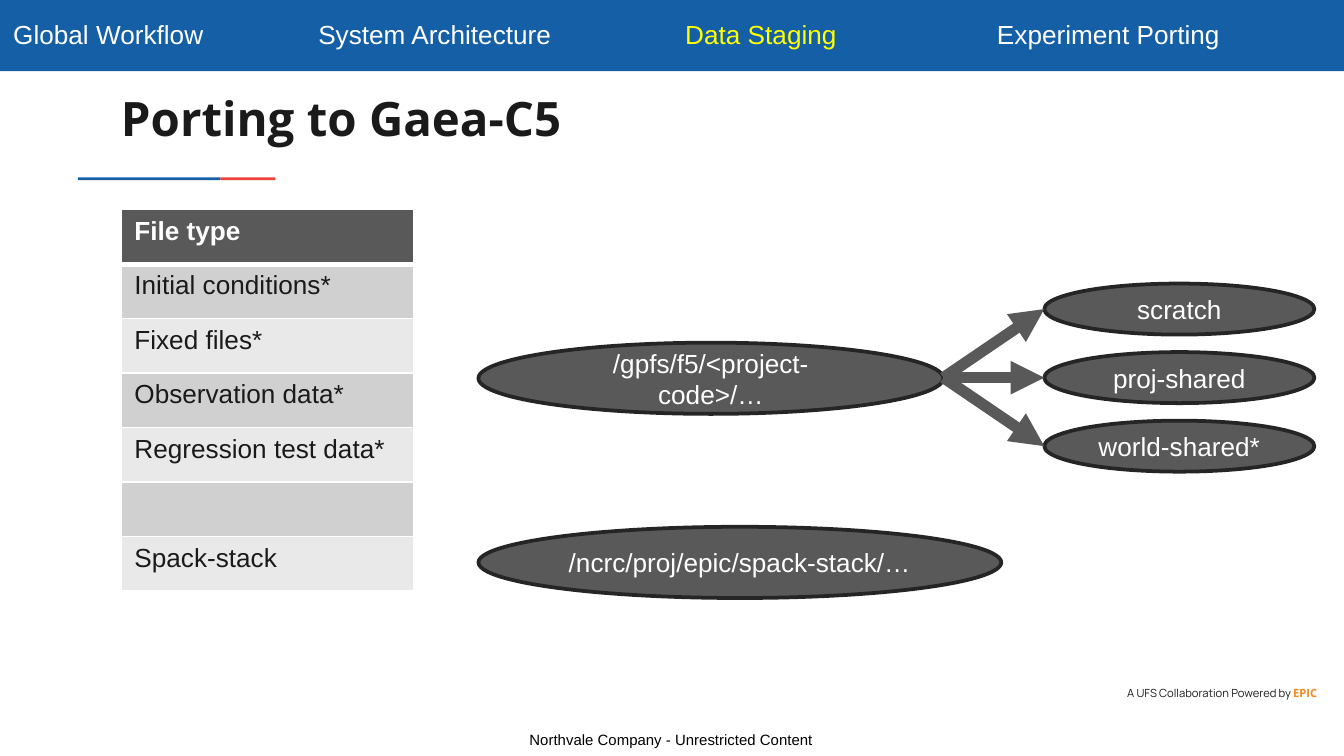
from lxml import etree
from pptx import Presentation
from pptx import util as u
from pptx.dml.color import RGBColor
from pptx.enum import shapes, text
from pptx.oxml.ns import qn

COLORS = {
    "blue": "145FA6", "red": "EE4238", "orange": "F68822", "yellow": "FFFF00",
    "gray": "595959", "outline": "252525", "ink": "1A1A1A",
    "band_dark": "D0D0D0", "band_light": "E9E9E9",
    "white": "FFFFFF", "black": "000000",
}
FILE_TYPES = ["File type", "Initial conditions*", "Fixed files*", "Observation data*",
              "Regression test data*", "", "Spack-stack"]
SECTIONS = ["Global Workflow", "System Architecture", "Data Staging", "Experiment Porting"]
CURRENT_SECTION = "Data Staging"
SECTION_TABS = [2.27, 5, 7.32]
PROJECT_FOLDERS = ["scratch", "proj-shared", "world-shared*"]


def rgb(name):
    return RGBColor.from_string(COLORS[name])


def add_run(para, words, size, color, font="Arial", bold=False):
    span = para.add_run()
    span.text = words
    span.font.size = u.Pt(size)
    span.font.name = font
    span.font.bold = bold
    span.font.color.rgb = rgb(color)


def add_text_box(page, left, top, width, height, align, inset=True):
    """Add an empty wrapping text box and return its first paragraph."""
    box = page.shapes.add_textbox(*map(u.Inches, (left, top, width, height)))
    frame = box.text_frame
    frame.word_wrap = True
    if not inset:
        frame.margin_left = frame.margin_right = 0
        frame.margin_top = frame.margin_bottom = 0
    para = frame.paragraphs[0]
    para.alignment = align
    return para


def add_bar(page, left, top, width, height, color):
    bar = page.shapes.add_shape(shapes.MSO_SHAPE.RECTANGLE,
                                *map(u.Inches, (left, top, width, height)))
    bar.shadow.inherit = False
    bar.fill.solid()
    bar.fill.fore_color.rgb = rgb(color)
    bar.line.fill.background()


def add_ellipse(page, words, left, top, width, height, side_margin=0.1):
    ellipse = page.shapes.add_shape(shapes.MSO_SHAPE.OVAL,
                                    *map(u.Inches, (left, top, width, height)))
    ellipse.shadow.inherit = False
    ellipse.fill.solid()
    ellipse.fill.fore_color.rgb = rgb("gray")
    ellipse.line.color.rgb = rgb("outline")
    ellipse.line.width = u.Pt(2)
    frame = ellipse.text_frame
    frame.word_wrap = True
    frame.margin_left = frame.margin_right = u.Inches(side_margin)
    frame.vertical_anchor = text.MSO_ANCHOR.MIDDLE
    frame.paragraphs[0].alignment = text.PP_ALIGN.CENTER
    add_run(frame.paragraphs[0], words, 14, "white")


def add_arrow(page, x1, y1, x2, y2):
    arrow = page.shapes.add_connector(shapes.MSO_CONNECTOR.STRAIGHT,
                                      *map(u.Inches, (x1, y1, x2, y2)))
    arrow.line.color.rgb = rgb("gray")
    arrow.line.width = u.Pt(6)
    etree.SubElement(arrow.line._get_or_add_ln(), qn("a:tailEnd"), type="triangle")
    etree.SubElement(arrow._element.spPr, qn("a:effectLst"))


def set_borders(cell, widths):
    """Draw white cell borders; widths maps a side (L, R, T, B) to points."""
    props = cell._tc.get_or_add_tcPr()
    for position, (side, width) in enumerate(widths.items()):
        line = etree.Element(qn(f"a:ln{side}"), w=str(u.Pt(width)))
        fill = etree.SubElement(line, qn("a:solidFill"))
        etree.SubElement(fill, qn("a:srgbClr"), val=COLORS["white"])
        props.insert(position, line)


def add_file_table(page):
    height = u.Inches(2.84)
    frame = page.shapes.add_table(len(FILE_TYPES), 1, u.Inches(0.9), u.Inches(1.56),
                                  u.Inches(2.18), height)
    table = frame.table
    for index, words in enumerate(FILE_TYPES):
        header = index == 0
        table.rows[index].height = height // len(FILE_TYPES)
        cell = table.cell(index, 0)
        cell.fill.solid()
        band = "band_dark" if index % 2 else "band_light"
        cell.fill.fore_color.rgb = rgb("gray" if header else band)
        set_borders(cell, {"L": 1, "R": 1, "T": 3 if index == 1 else 1,
                           "B": 3 if header else 1})
        if words:
            add_run(cell.text_frame.paragraphs[0], words, 14,
                    "white" if header else "ink", bold=header)


def add_navigation(page):
    add_bar(page, 0, 0, 10, 0.53, "blue")
    para = add_text_box(page, 0, 0.09, 10, 0.34, text.PP_ALIGN.LEFT)
    tabs = etree.SubElement(para._p.get_or_add_pPr(), qn("a:tabLst"))
    for position in SECTION_TABS:
        etree.SubElement(tabs, qn("a:tab"), pos=str(u.Inches(position)), algn="l")
    for index, section in enumerate(SECTIONS):
        color = "yellow" if section == CURRENT_SECTION else "white"
        add_run(para, ("\t" if index else "") + section, 14, color)


def set_title(page, words):
    title = page.shapes.title
    title.left, title.top, title.width, title.height = map(u.Inches, (0.8, 0.61, 8.41, 0.59))
    frame = title.text_frame
    frame.auto_size = text.MSO_AUTO_SIZE.NONE
    frame.word_wrap = True
    frame.vertical_anchor = text.MSO_ANCHOR.TOP
    frame.margin_left = frame.margin_right = u.Inches(0.1)
    frame.margin_top = frame.margin_bottom = u.Inches(0.1)
    para = frame.paragraphs[0]
    para.alignment = text.PP_ALIGN.LEFT
    para.line_spacing = 0.9
    add_run(para, words, 25.4, "ink", "Open Sans", True)


def add_folder_tree(page):
    add_ellipse(page, "/gpfs/f5/<project-code>/…", 3.56, 2.55, 3.46, 0.53, side_margin=0.2)
    for index, folder in enumerate(PROJECT_FOLDERS):
        middle = 2.81 + (index - 1) * 0.51
        add_ellipse(page, folder, 7.77, middle - 0.19, 2.01, 0.38)
        add_arrow(page, 7.02, 2.81, 7.77, middle)
    add_ellipse(page, "/ncrc/proj/epic/spack-stack/…", 3.56, 3.92, 3.89, 0.53)


def add_footer(page):
    credit = add_text_box(page, 7.81, 5.11, 1.99, 0.1, text.PP_ALIGN.RIGHT, inset=False)
    add_run(credit, "A UFS Collaboration Powered by ", 6, "ink", "Manrope")
    add_run(credit, "EPIC", 6, "orange", "Open Sans", True)
    notice = add_text_box(page, 3.83, 5.39, 2.33, 0.24, text.PP_ALIGN.CENTER)
    add_run(notice, "Northvale Company - Unrestricted Content", 8, "black")


def main():
    deck = Presentation()
    deck.slide_width, deck.slide_height = u.Inches(10), u.Inches(10 * 9 / 16)
    page = deck.slides.add_slide(deck.slide_layouts[5])
    add_navigation(page)
    set_title(page, "Porting to Gaea-C5")
    add_bar(page, 0.58, 1.32, 1.06, 0.02, "blue")
    add_bar(page, 1.64, 1.32, 0.41, 0.02, "red")
    add_file_table(page)
    add_folder_tree(page)
    add_footer(page)
    deck.save("out.pptx")


if __name__ == "__main__":
    main()
